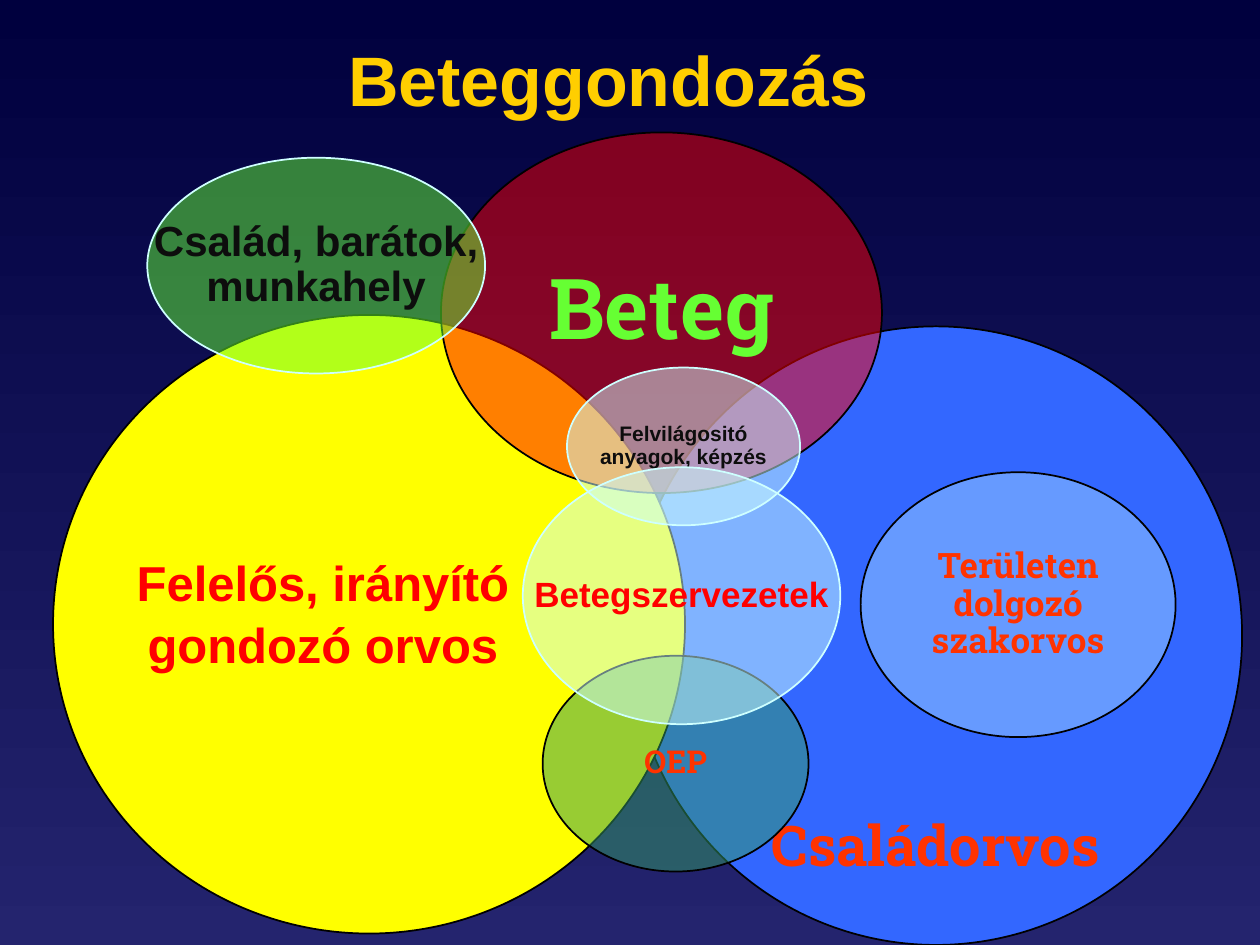
import pptx
import pptx.dml.color
import pptx.enum.shapes
import pptx.enum.text
import pptx.oxml.ns
import pptx.util
from lxml import etree
from pptx.util import Cm

COLORS = {
    "night": "00003E",
    "dusk": "24246E",
    "gold": "FFCE00",
    "blue": "3367FF",
    "sky": "9ACEFF",
    "yellow": "FFFF00",
    "teal": "339A67",
    "red": "FF0000",
    "ice": "CEFFFF",
    "lime": "66FF33",
    "orange": "FF3300",
    "ink": "0D0D0D",
    "black": "000000",
}
SLAB = "Roboto Slab"


def rgb(name):
    return pptx.dml.color.RGBColor.from_string(COLORS[name])


def paint_background(page):
    fill = page.background.fill
    fill.gradient()
    fill.gradient_angle = 270
    for stop, name in zip(fill.gradient_stops, ("night", "dusk")):
        stop.color.rgb = rgb(name)


def write_text(shape, text, size=20, color="orange", font="Arial", spacing=0.9, wrap=False):
    frame = shape.text_frame
    frame.word_wrap = wrap
    frame.vertical_anchor = pptx.enum.text.MSO_ANCHOR.MIDDLE
    for index, line in enumerate(text.split("\n")):
        para = frame.paragraphs[0] if index == 0 else frame.add_paragraph()
        para.alignment = pptx.enum.text.PP_ALIGN.CENTER
        para.line_spacing = spacing
        span = para.add_run()
        span.text = line
        span.font.name = font
        span.font.size = pptx.util.Pt(size)
        span.font.bold = True
        span.font.color.rgb = rgb(color)


def make_translucent(shape, percent=50):
    color = shape.fill._xPr.find(".//" + pptx.oxml.ns.qn("a:srgbClr"))
    alpha = etree.SubElement(color, pptx.oxml.ns.qn("a:alpha"))
    alpha.set("val", str(percent * 1000))


def add_ellipse(page, place, fill, line="black", translucent=True, text=None, **style):
    oval = page.shapes.add_shape(
        pptx.enum.shapes.MSO_SHAPE.OVAL, *(Cm(length) for length in place)
    )
    oval.shadow.inherit = False
    oval.fill.solid()
    oval.fill.fore_color.rgb = rgb(fill)
    if translucent:
        make_translucent(oval)
    oval.line.color.rgb = rgb(line)
    oval.line.width = pptx.util.Pt(1)
    if text:
        write_text(oval, text, **style)


def add_label(page, place, text, **style):
    box = page.shapes.add_textbox(*(Cm(length) for length in place))
    write_text(box, text, **style)


def main():
    deck = pptx.Presentation()
    deck.slide_width, deck.slide_height = Cm(25.4), Cm(19.05)
    page = deck.slides.add_slide(deck.slide_layouts[6])
    paint_background(page)

    add_ellipse(page, (12.7, 6.58, 12.34, 12.47), "blue", translucent=False)
    add_label(page, (15.3, 16.2, 7.14, 1.8), "Családorvos", size=32, font=SLAB)
    add_ellipse(page, (17.35, 9.52, 6.35, 5.34), "sky",
                text="Területen\ndolgozó\nszakorvos", font=SLAB)
    add_ellipse(page, (1.07, 6.35, 12.74, 12.47), "yellow", translucent=False)
    add_label(page, (0.84, 0, 22.86, 3.18), "Beteggondozás",
              size=40, color="gold", spacing=1.0, wrap=True)
    add_ellipse(page, (10.94, 13.22, 5.36, 4.35), "teal",
                text="OEP", size=18, font=SLAB)
    add_ellipse(page, (8.89, 2.67, 8.89, 7.27), "red",
                text="Beteg", size=48, color="lime", font=SLAB)
    add_ellipse(page, (11.43, 7.41, 4.7, 3.18), "ice", line="ice",
                text="Felvilágositó\nanyagok, képzés", size=12, color="ink")
    add_label(page, (2.46, 11, 8.1, 2.64), "Felelős, irányító\ngondozó orvos",
              size=28, color="red", spacing=1.05)
    add_ellipse(page, (10.54, 9.42, 6.4, 5.18), "ice", line="ice",
                text="Betegszervezetek", color="red")
    add_ellipse(page, (2.97, 3.18, 6.81, 4.35), "lime", line="ice",
                text="Család, barátok,\nmunkahely", size=24, color="ink")

    deck.save("out.pptx")


if __name__ == "__main__":
    main()
